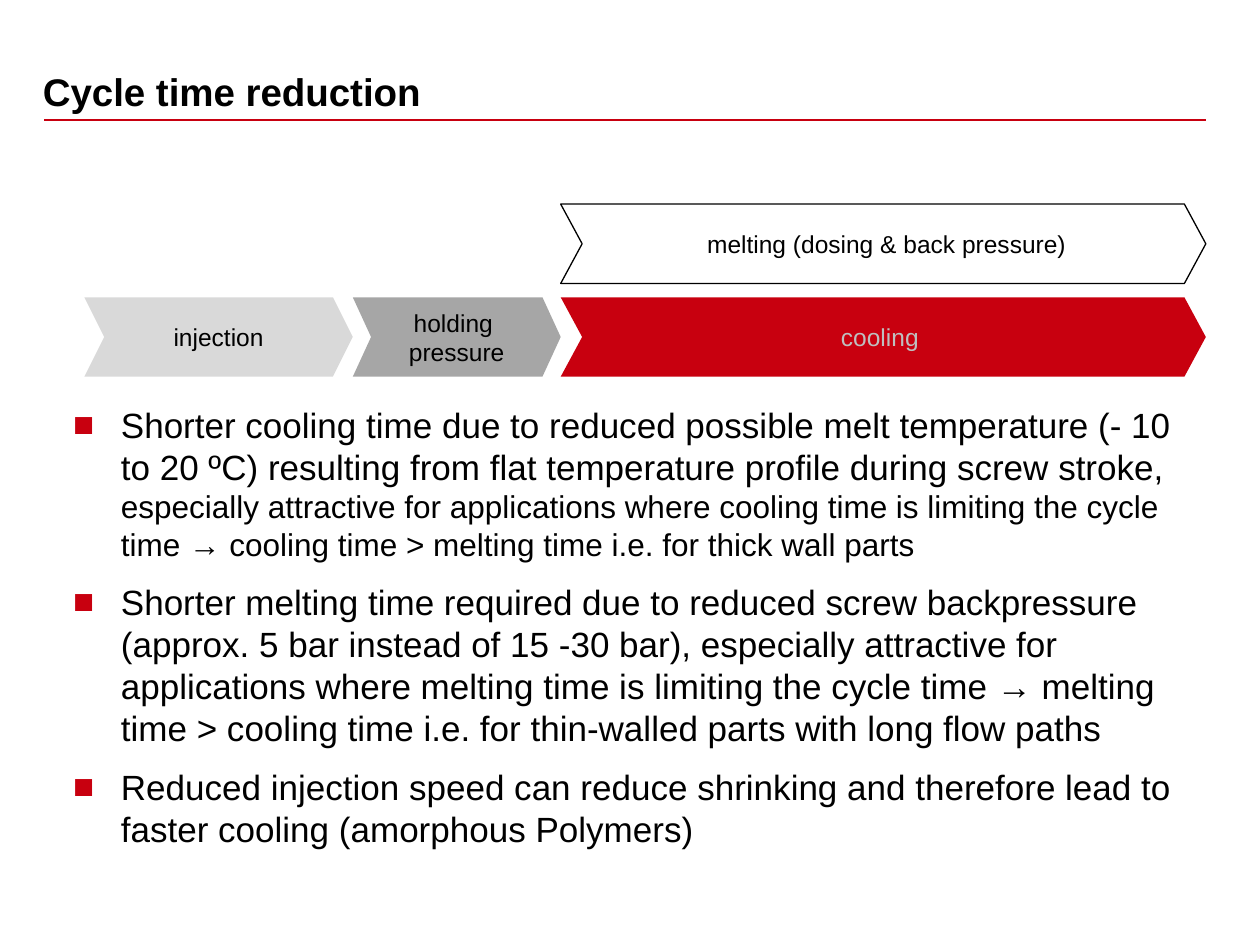
"""Build the cycle time reduction slide with its process chevrons and bullet list."""
from lxml import etree
from pptx import Presentation
from pptx.dml.color import RGBColor
from pptx.enum import shapes, text
from pptx.oxml import ns
from pptx.util import Inches, Pt


def color(value):
    """Turn a hex string into a colour."""
    return RGBColor.from_string(value)


def write(para, words, size, ink="000000", bold=False):
    """Add one formatted span to a paragraph."""
    span = para.add_run()
    span.text = words
    for name, value in {"name": "Arial", "size": Pt(size), "bold": bold}.items():
        setattr(span.font, name, value)
    span.font.color.rgb = color(ink)


RED = "C8000F"
BLACK = "000000"
MARGINS = dict.fromkeys(("margin_left", "margin_top", "margin_right", "margin_bottom"), 0)

deck = Presentation()
deck.slide_width, deck.slide_height = Inches(10), Inches(7.5)
page = deck.slides.add_slide(deck.slide_layouts[1])
title, body = page.placeholders

rule = page.shapes.add_connector(
    shapes.MSO_CONNECTOR.STRAIGHT, Inches(0.35), Inches(0.95), Inches(9.57), Inches(0.95))
rule.line.color.rgb = color(RED)
rule.line.width = Pt(1.25)
etree.SubElement(rule.element.spPr, ns.qn("a:effectLst"))

phases = [
    (0.67, 2.36, 2.13, 0.25, "D9D9D9", None, BLACK, ["injection"]),
    (2.8, 2.36, 1.65, 0.23, "A6A6A6", None, BLACK, ["holding ", "pressure"]),
    (4.45, 2.36, 5.12, 0.27, RED, None, "BFBFBF", ["cooling "]),
    (4.45, 1.62, 5.12, 0.27, "FFFFFF", BLACK, BLACK, [" melting (dosing & back pressure)"]),
]
for left, top, width, point, fill, outline, ink, lines in phases:
    chevron = page.shapes.add_shape(
        shapes.MSO_SHAPE.CHEVRON, Inches(left), Inches(top), Inches(width), Inches(0.63))
    chevron.adjustments[0] = point
    chevron.shadow.inherit = False
    chevron.fill.solid()
    chevron.fill.fore_color.rgb = color(fill)
    if outline:
        chevron.line.color.rgb = color(outline)
        chevron.line.width = Pt(0.75)
    else:
        chevron.line.fill.background()
    frame = chevron.text_frame
    frame.word_wrap = False
    frame.vertical_anchor = text.MSO_ANCHOR.MIDDLE
    for index, line in enumerate(lines):
        para = frame.add_paragraph() if index else frame.paragraphs[0]
        para.alignment = text.PP_ALIGN.CENTER
        write(para, line, 14, ink)

placements = [
    (title, (0.34, 0.13, 6.78, 0.78), text.MSO_ANCHOR.BOTTOM),
    (body, (0.28, 3.2, 9.21, 3.86), text.MSO_ANCHOR.TOP),
]
for box, place, anchor in placements:
    box.left, box.top, box.width, box.height = map(Inches, place)
    layout = {**MARGINS, "word_wrap": True, "vertical_anchor": anchor,
              "auto_size": text.MSO_AUTO_SIZE.NONE}
    for name, value in layout.items():
        setattr(box.text_frame, name, value)

heading = title.text_frame.paragraphs[0]
heading.alignment = text.PP_ALIGN.LEFT
heading.line_spacing = 1.12
write(heading, "Cycle time reduction", 22, bold=True)

points = [
    [("Shorter cooling time due to reduced possible melt temperature (- 10 to 20 ºC) "
      "resulting from flat temperature profile during screw stroke, ", 20),
     ("especially attractive for applications where cooling time is limiting the cycle "
      "time → cooling time > melting time i.e. for thick wall parts", 18)],
    [("Shorter melting time required due to reduced screw backpressure (approx. 5 bar "
      "instead of 15 -30 bar), especially attractive for applications where melting time "
      "is limiting the cycle time → melting time > cooling time i.e. for thin-walled "
      "parts with long flow paths", 20)],
    [("Reduced injection speed can reduce shrinking and therefore lead to faster cooling "
      "(amorphous Polymers)", 20)],
]
for index, spans in enumerate(points):
    para = body.text_frame.add_paragraph() if index else body.text_frame.paragraphs[0]
    properties = para._p.get_or_add_pPr()
    properties.set("marL", str(Inches(0.68)))
    properties.set("indent", str(Inches(-0.38)))
    bullet_color = etree.SubElement(properties, ns.qn("a:buClr"))
    etree.SubElement(bullet_color, ns.qn("a:srgbClr"), val=RED)
    etree.SubElement(properties, ns.qn("a:buFont"), typeface="Arial")
    etree.SubElement(properties, ns.qn("a:buChar"), char="■")
    spacing = {"line_spacing": 1.0, "space_before": Pt(0), "space_after": Pt(10)}
    for name, value in spacing.items():
        setattr(para, name, value)
    for words, size in spans:
        write(para, words, size)

deck.save("out.pptx")
